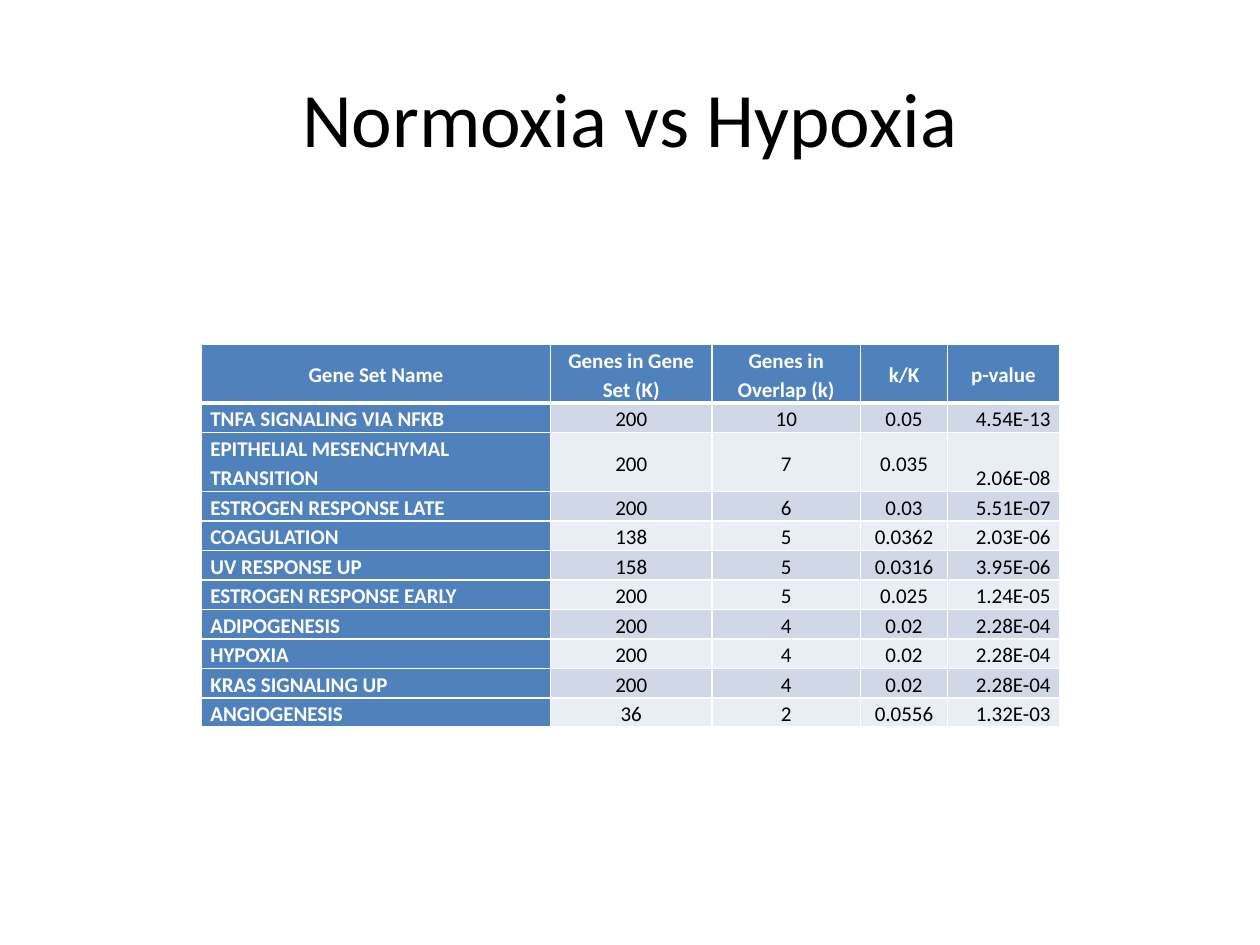
from dataclasses import dataclass

from lxml.etree import fromstring
from pptx import Presentation
from pptx.dml.color import RGBColor
from pptx.enum.text import MSO_ANCHOR, PP_ALIGN
from pptx.oxml.ns import nsdecls
from pptx.util import Cm, Pt


@dataclass(frozen=True)
class Theme:
    font: str = "Calibri"
    head: int = 44
    body: int = 12
    dark: str = "000000"
    light: str = "FFFFFF"
    blue: str = "4F81BD"
    bands: tuple = ("D0D8E8", "E9EDF4")


THEME = Theme()
WIDTHS = (7.04, 3.25, 3, 1.75, 2.26)
ROW = 0.53

NAMES = ("Gene Set Name", "Genes in Gene Set (K)", "Genes in Overlap (k)",
         "k/K", "p-value")
GENES = (
    ("TNFA SIGNALING VIA NFKB", "200", "10", "0.05", "4.54E-13"),
    ("EPITHELIAL MESENCHYMAL TRANSITION", "200", "7", "0.035", "2.06E-08"),
    ("ESTROGEN RESPONSE LATE", "200", "6", "0.03", "5.51E-07"),
    ("COAGULATION", "138", "5", "0.0362", "2.03E-06"),
    ("UV RESPONSE UP", "158", "5", "0.0316", "3.95E-06"),
    ("ESTROGEN RESPONSE EARLY", "200", "5", "0.025", "1.24E-05"),
    ("ADIPOGENESIS", "200", "4", "0.02", "2.28E-04"),
    ("HYPOXIA", "200", "4", "0.02", "2.28E-04"),
    ("KRAS SIGNALING UP", "200", "4", "0.02", "2.28E-04"),
    ("ANGIOGENESIS", "36", "2", "0.0556", "1.32E-03"),
)


def style(para, size, color, align, bold=False):
    para.alignment = align
    font = para.font
    font.name, font.size, font.bold = THEME.font, Pt(size), bold
    font.color.rgb = RGBColor.from_string(color)


def border(cell, top, base):
    """Draw the four cell edges; top and base are widths in points."""
    props = cell._tc.get_or_add_tcPr()
    edges = (("lnL", 1), ("lnR", 1), ("lnT", top), ("lnB", base))
    for spot, (tag, width) in enumerate(edges):
        props.insert(spot, fromstring(
            f'<a:{tag} {nsdecls("a")} w="{Pt(width)}"><a:solidFill>'
            f'<a:srgbClr val="{THEME.light}"/></a:solidFill></a:{tag}>'))


def fill_cell(cell, text, row, col):
    head, last = row == 0, col == len(WIDTHS) - 1
    strong = head or col == 0
    cell.text = text
    cell.margin_left = cell.margin_right = Cm(0.18)
    cell.margin_top = cell.margin_bottom = 0

    # Headings and counts are centred; names and p-values sit at the base
    if head or not (col == 0 or last):
        align, anchor = PP_ALIGN.CENTER, MSO_ANCHOR.MIDDLE
    else:
        align = PP_ALIGN.RIGHT if last else PP_ALIGN.LEFT
        anchor = MSO_ANCHOR.BOTTOM
    cell.vertical_anchor = anchor
    para = cell.text_frame.paragraphs[0]
    para.line_spacing = 1.15
    style(para, THEME.body, THEME.light if strong else THEME.dark,
          align, strong)

    # Blue header row and name column, banded values
    color = THEME.blue if strong else THEME.bands[(row - 1) % 2]
    cell.fill.solid()
    cell.fill.fore_color.rgb = RGBColor.from_string(color)
    border(cell, 3 if row == 1 else 1, 3 if head else 1)


def add_title(slide, text):
    title = slide.shapes.title
    title.left, title.top = Cm(1.27), Cm(0.76)
    title.width, title.height = Cm(22.86), Cm(3.18)
    title.text_frame.vertical_anchor = MSO_ANCHOR.MIDDLE
    title.text = text
    style(title.text_frame.paragraphs[0], THEME.head, THEME.dark,
          PP_ALIGN.CENTER)


def add_grid(slide, rows):
    table = slide.shapes.add_table(
        len(rows), len(WIDTHS), Cm(4.06), Cm(6.94),
        Cm(sum(WIDTHS)), Cm(ROW * len(rows))).table
    for col, width in zip(table.columns, WIDTHS):
        col.width = Cm(width)
    for r, row in enumerate(rows):
        table.rows[r].height = Cm(ROW)
        for c, text in enumerate(row):
            fill_cell(table.cell(r, c), text, r, c)


def main():
    deck = Presentation()
    deck.slide_width, deck.slide_height = Cm(25.4), Cm(19.05)
    slide = deck.slides.add_slide(deck.slide_layouts[5])
    add_title(slide, "Normoxia vs Hypoxia")
    add_grid(slide, (NAMES, *GENES))
    deck.save("out.pptx")


if __name__ == "__main__":
    main()
